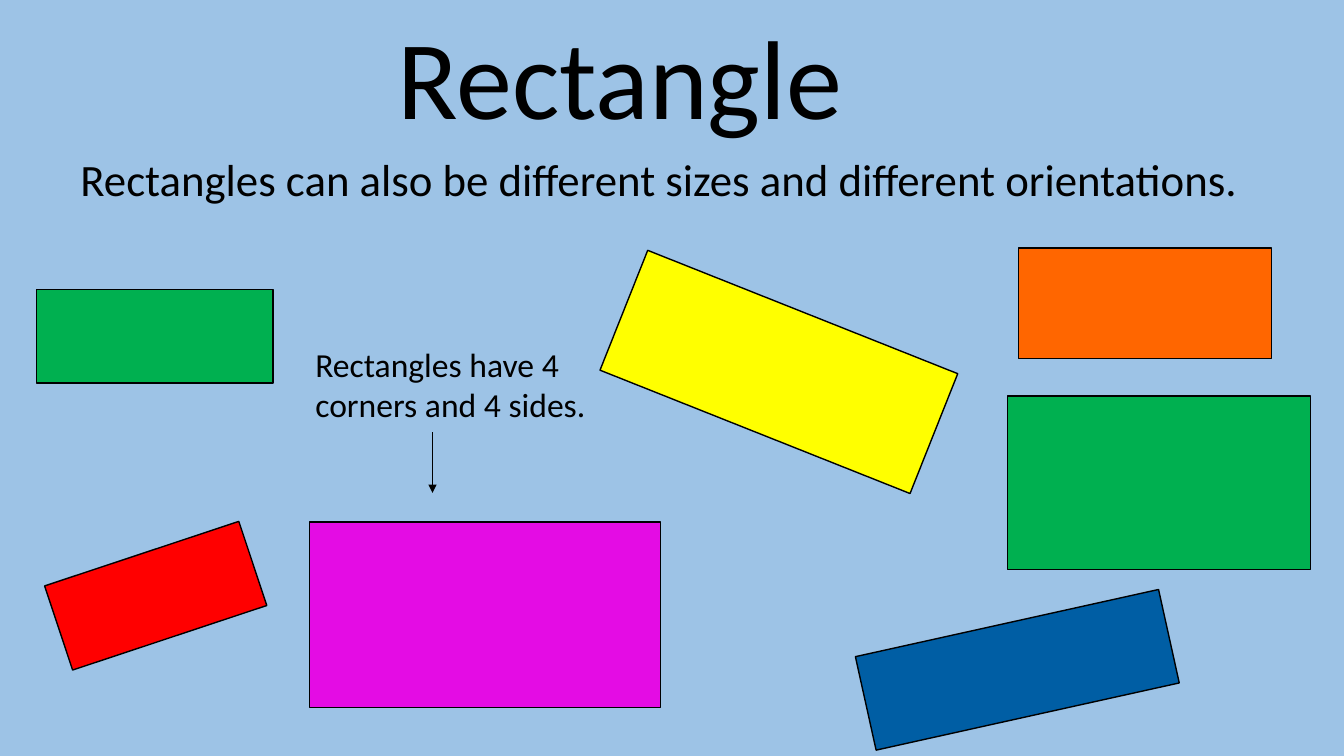
from dataclasses import dataclass

import pptx
import pptx.dml.color
import pptx.enum.shapes
import pptx.enum.text
import pptx.oxml
import pptx.oxml.ns
import pptx.util

Inches = pptx.util.Inches
Align = pptx.enum.text.PP_ALIGN
Anchor = pptx.enum.text.MSO_ANCHOR


@dataclass(frozen=True)
class Theme:
    font: str = "Calibri"
    title_size: int = 80
    lead_size: int = 32
    note_size: int = 24
    outline: float = 1
    arrow: float = 0.5
    ink: str = "000000"
    sky: str = "9DC3E6"
    green: str = "00B050"
    magenta: str = "E40CE4"
    yellow: str = "FFFF00"
    red: str = "FF0000"
    orange: str = "FF6600"
    blue: str = "005EA4"


@dataclass(frozen=True)
class Box:
    left: float
    top: float
    width: float
    height: float

    def lengths(self):
        return [Inches(n) for n in (self.left, self.top, self.width, self.height)]


THEME = Theme()


def color(code):
    return pptx.dml.color.RGBColor.from_string(code)


def write_text(shape, words, size, align=Align.LEFT, wrap=True):
    frame = shape.text_frame
    frame.word_wrap = wrap
    frame.auto_size = pptx.enum.text.MSO_AUTO_SIZE.NONE
    frame.vertical_anchor = Anchor.TOP
    para = frame.paragraphs[0]
    para.alignment = align
    span = para.add_run()
    span.text = words
    span.font.name = THEME.font
    span.font.size = pptx.util.Pt(size)
    span.font.color.rgb = color(THEME.ink)


def add_label(page, box, words, size):
    write_text(page.shapes.add_textbox(*box.lengths()), words, size)


def add_rectangle(page, box, fill, turn=0):
    shape = page.shapes.add_shape(
        pptx.enum.shapes.MSO_SHAPE.RECTANGLE, *box.lengths())
    shape.rotation = turn
    shape.shadow.inherit = False
    shape.fill.solid()
    shape.fill.fore_color.rgb = color(fill)
    shape.line.color.rgb = color(THEME.ink)
    shape.line.width = pptx.util.Pt(THEME.outline)


def add_down_arrow(page, left, top, length):
    arrow = page.shapes.add_connector(
        pptx.enum.shapes.MSO_CONNECTOR.STRAIGHT,
        Inches(left), Inches(top), Inches(left), Inches(top + length))
    arrow.line.color.rgb = color(THEME.ink)
    arrow.line.width = pptx.util.Pt(THEME.arrow)
    head = pptx.oxml.parse_xml(
        f'<a:tailEnd {pptx.oxml.ns.nsdecls("a")} type="triangle"/>')
    arrow.line._get_or_add_ln().append(head)
    arrow._element.spPr.append(pptx.oxml.parse_xml(
        f'<a:effectLst {pptx.oxml.ns.nsdecls("a")}/>'))


def build_heading(page, box):
    # Title with the lead sentence below it
    title = page.shapes.title
    title.left, title.top, title.width, title.height = Box(
        box.left + 3.12, box.top, 4.66, 1.45).lengths()
    write_text(title, "Rectangle", THEME.title_size, Align.CENTER, wrap=False)
    add_label(page, Box(box.left, box.top + 1.44, box.width, 0.64),
              "Rectangles can also be different sizes and different orientations.",
              THEME.lead_size)


def build_examples(page, box):
    # Rectangles of several sizes and turns, placed within the box
    examples = [
        (0, 0.41, 2.35, 0.93, THEME.green, 0),
        (2.71, 2.72, 3.48, 1.84, THEME.magenta, 0),
        (5.71, 0.59, 3.31, 1.28, THEME.yellow, 21.7),
        (0.17, 3.01, 2.03, 0.88, THEME.red, -18.4),
        (9.74, 0, 2.51, 1.1, THEME.orange, 0),
        (8.19, 3.71, 3.08, 0.95, THEME.blue, -12.5),
        (9.63, 1.47, 3.01, 1.72, THEME.green, 0),
    ]
    for left, top, width, height, fill, turn in examples:
        add_rectangle(page, Box(box.left + left, box.top + top, width, height),
                      fill, turn)


def build_note(page, box):
    # Fact with an arrow down to the magenta rectangle
    add_down_arrow(page, box.left + 1.26, box.top + 0.93, 0.6)
    add_label(page, box, "Rectangles have 4 corners and 4 sides.",
              THEME.note_size)


def main():
    deck = pptx.Presentation()
    deck.slide_width, deck.slide_height = Inches(13.33), Inches(7.5)
    page = deck.slides.add_slide(deck.slide_layouts.get_by_name("Title Only"))
    page.background.fill.solid()
    page.background.fill.fore_color.rgb = color(THEME.sky)
    build_heading(page, Box(0.7, 0.02, 13.77, 2.08))
    build_examples(page, Box(0.36, 2.46, 12.64, 4.66))
    build_note(page, Box(3.03, 3.36, 3, 0.91))
    deck.save("out.pptx")


if __name__ == "__main__":
    main()
